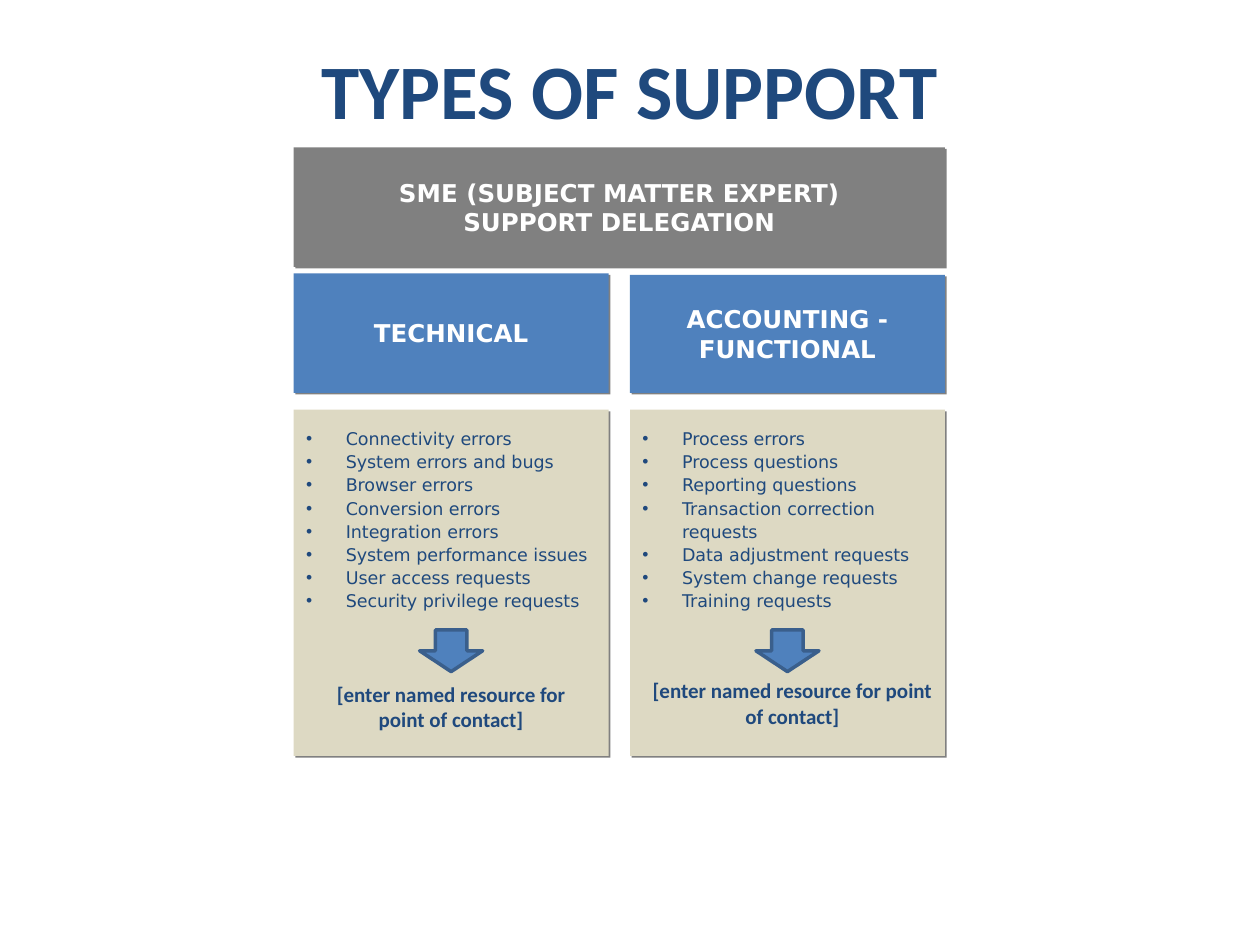
from lxml import etree
from pptx import Presentation
from pptx.dml.color import RGBColor
from pptx.enum.shapes import MSO_SHAPE
from pptx.enum.text import MSO_ANCHOR, MSO_AUTO_SIZE, PP_ALIGN
from pptx.oxml.ns import qn
from pptx.util import Cm, Pt

RECT, ARROW = MSO_SHAPE.RECTANGLE, MSO_SHAPE.DOWN_ARROW
CENTER, LEFT = PP_ALIGN.CENTER, PP_ALIGN.LEFT
TOP, MIDDLE = MSO_ANCHOR.TOP, MSO_ANCHOR.MIDDLE
NO_FIT = MSO_AUTO_SIZE.NONE

COLORS = {"navy": "1F497D", "blue": "4F81BD", "edge": "3A5F8C",
          "gray": "808080", "sand": "DDD9C3", "white": "FFFFFF"}
HEAD_FONT, BODY_FONT = "Calibri", "DejaVu Sans"

TITLE = "TYPES OF SUPPORT"
BANNER = ["SME (SUBJECT MATTER EXPERT)", "SUPPORT DELEGATION"]
CONTACT = "[enter named resource for point of contact]"
# heading, heading top, contact box (offset, top, width), items
COLUMNS = [
    ("TECHNICAL", 5.51, (0.23, 13.61, 5.89),
     ["Connectivity errors", "System errors and bugs", "Browser errors",
      "Conversion errors", "Integration errors", "System performance issues",
      "User access requests", "Security privilege requests"]),
    ("ACCOUNTING - FUNCTIONAL", 5.54, (0.2, 13.54, 6.15),
     ["Process errors", "Process questions", "Reporting questions",
      "Transaction correction requests", "Data adjustment requests",
      "System change requests", "Training requests"]),
]
X0, STEP, COL_W = 5.92, 6.78, 6.35
HEAD_BOTTOM = 7.92
PANEL_TOP, PANEL_H = 8.26, 6.98
ARROW_TOP, ARROW_W, ARROW_H = 12.7, 1.27, 0.84


def rgb(name):
    return RGBColor.from_string(COLORS[name])


def place(s, x, y, w, h):
    s.left, s.top, s.width, s.height = Cm(x), Cm(y), Cm(w), Cm(h)


def write(tf, lines, font, size, color, bold=True, align=CENTER):
    tf.word_wrap = True
    for i, line in enumerate(lines):
        p = tf.paragraphs[0] if i == 0 else tf.add_paragraph()
        p.alignment = align
        r = p.add_run()
        r.text = line
        r.font.name, r.font.size, r.font.bold = font, Pt(size), bold
        r.font.color.rgb = rgb(color)


def style_block(s, fill, anchor=MIDDLE, top_inset=0.25):
    """Solid fill, no outline, hard offset shadow and even margins."""
    s.fill.solid()
    s.fill.fore_color.rgb = rgb(fill)
    s.line.fill.background()
    s.shadow.inherit = False
    effects = s._element.spPr.find(qn("a:effectLst"))
    shadow = etree.SubElement(effects, qn("a:outerShdw"), blurRad="0",
                              dist=str(Pt(1.4)), dir="2700000", algn="tl",
                              rotWithShape="0")
    etree.SubElement(shadow, qn("a:srgbClr"), val=COLORS["gray"])
    tf = s.text_frame
    tf.auto_size, tf.vertical_anchor = NO_FIT, anchor
    tf.margin_left = tf.margin_right = tf.margin_bottom = Cm(0.25)
    tf.margin_top = Cm(top_inset)
    return tf


def add_header(shapes, lines, fill, x, y, w, h):
    s = shapes.add_shape(RECT, Cm(x), Cm(y), Cm(w), Cm(h))
    write(style_block(s, fill), lines, BODY_FONT, 14, "white")


def fill_panel(s, items, x):
    place(s, x, PANEL_TOP, COL_W, PANEL_H)
    tf = style_block(s, "sand", TOP, 0.33)
    write(tf, items, BODY_FONT, 10, "navy", False, LEFT)
    for p in tf.paragraphs:
        p.line_spacing, p.space_before = 1.1, Pt(0)
        pPr = p._p.get_or_add_pPr()
        pPr.set("marL", str(Cm(0.8)))
        pPr.set("indent", str(-Cm(0.8)))


def add_arrow(shapes, x):
    s = shapes.add_shape(ARROW, Cm(x), Cm(ARROW_TOP), Cm(ARROW_W), Cm(ARROW_H))
    s.shadow.inherit = False
    s.fill.solid()
    s.fill.fore_color.rgb = rgb("blue")
    s.line.color.rgb = rgb("edge")
    s.line.width = Pt(2)


def main():
    prs = Presentation()
    prs.slide_width, prs.slide_height = Cm(25.4), Cm(19.05)
    slide = prs.slides.add_slide(prs.slide_layouts[3])  # Two Content
    shapes = slide.shapes

    title = shapes.title
    place(title, 1.27, 0.2, 22.86, 3.18)
    title.text_frame.vertical_anchor = MIDDLE
    write(title.text_frame, [TITLE], HEAD_FONT, 44, "navy")

    add_header(shapes, BANNER, "gray", X0, 2.97, STEP + COL_W, 2.41)
    for i, (heading, top, contact, items) in enumerate(COLUMNS):
        x = X0 + i * STEP
        add_header(shapes, [heading], "blue", x, top, COL_W, HEAD_BOTTOM - top)
        fill_panel(slide.placeholders[i + 1], items, x)
        add_arrow(shapes, x + (COL_W - ARROW_W) / 2)
        dx, y, w = contact
        box = shapes.add_textbox(Cm(x + dx), Cm(y), Cm(w), Cm(1.27))
        write(box.text_frame, [CONTACT], HEAD_FONT, 12, "navy")

    prs.save("out.pptx")


if __name__ == "__main__":
    main()
